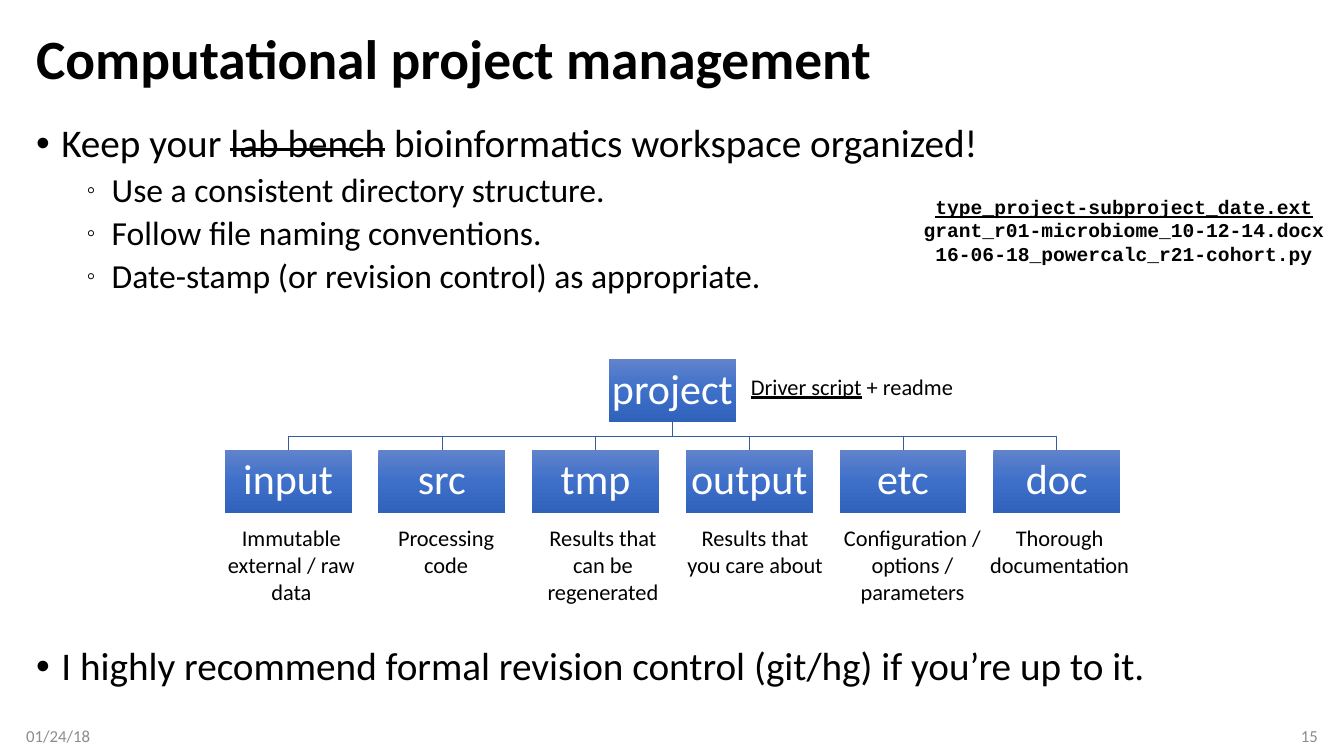
from dataclasses import dataclass

from lxml import etree
from pptx import Presentation
from pptx.dml.color import RGBColor
from pptx.enum.dml import MSO_LINE
from pptx.enum.shapes import MSO_SHAPE
from pptx.enum.text import MSO_ANCHOR, MSO_AUTO_SIZE, PP_ALIGN
from pptx.oxml.ns import qn
from pptx.shapes.base import BaseShape
from pptx.slide import Slide
from pptx.text.text import _Paragraph
from pptx.util import Inches, Pt

LEFT, CENTER, RIGHT = PP_ALIGN.LEFT, PP_ALIGN.CENTER, PP_ALIGN.RIGHT
TOP, MIDDLE = MSO_ANCHOR.TOP, MSO_ANCHOR.MIDDLE
FIT_SHAPE = MSO_AUTO_SIZE.SHAPE_TO_FIT_TEXT
RECTANGLE, SOLID = MSO_SHAPE.RECTANGLE, MSO_LINE.SOLID

COLORS = {"text": "000000", "footer": "8C8C8C", "box_text": "FFFFFF", "branch": "365B9D"}
BOX_GRADIENT = {0: "6183CB", 50: "3E70CA", 100: "3062BB"}

# Directory tree geometry, in inches
BOX_WIDTH, BOX_HEIGHT = 1.26, 0.63
COLUMN_STEP = BOX_WIDTH * 1.21
TREE_CENTER = 6.67
ROOT_TOP, FOLDER_TOP, CAPTION_TOP = 3.56, 4.46, 5.15


@dataclass(frozen=True)
class Style:
    size: float
    color: str = "text"
    font: str = "Calibri"
    bold: bool = False
    align: PP_ALIGN = LEFT
    line_spacing: float = 1.0


@dataclass(frozen=True)
class Piece:
    text: str
    underline: bool = False
    strike: bool = False


@dataclass(frozen=True)
class Bullet:
    symbol: str
    indent: float
    space_before: float
    percent: int
    style: Style


@dataclass(frozen=True)
class Area:
    left: float
    top: float
    width: float
    height: float


@dataclass(frozen=True)
class Folder:
    name: str
    caption: str
    caption_left: float
    caption_width: float


TITLE = Style(39.6, bold=True, line_spacing=0.9)
FOOTER = Style(12, "footer")
PAGE_NUMBER = Style(12, "footer", align=RIGHT)
BOX_LABEL = Style(30, "box_text", align=CENTER, line_spacing=0.9)
NOTE = Style(16)
CAPTION = Style(16, align=CENTER)
CODE = Style(14, font="Courier New", bold=True, align=CENTER)
MAIN_BULLET = Bullet("•", 0.25, 10, 100, Style(28, line_spacing=0.9))
SUB_BULLET = Bullet("◦", 0.75, 5, 75, Style(24, line_spacing=0.9))

FOLDERS = [
    Folder("input", "Immutable\nexternal / raw\ndata", 2.15, 1.48),
    Folder("src", "Processing\ncode", 3.84, 1.17),
    Folder("tmp", "Results that\ncan be\nregenerated", 5.32, 1.32),
    Folder("output", "Results that\nyou care about", 6.71, 1.56),
    Folder("etc", "Configuration /\noptions /\nparameters", 8.26, 1.58),
    Folder("doc", "Thorough\ndocumentation", 9.71, 1.6),
]


def write_paragraph(paragraph: _Paragraph, pieces: list[Piece], style: Style) -> None:
    paragraph.alignment = style.align
    paragraph.line_spacing = style.line_spacing
    if len(pieces) == 1:
        paragraph.text = pieces[0].text
    else:
        for piece in pieces:
            paragraph.add_run().text = piece.text
    for index, run in enumerate(paragraph.runs):
        piece = pieces[min(index, len(pieces) - 1)]
        run.font.size = Pt(style.size)
        run.font.name = style.font
        run.font.bold = style.bold
        run.font.underline = piece.underline
        run.font.color.rgb = RGBColor.from_string(COLORS[style.color])
        if piece.strike:
            run.font._element.set("strike", "sngStrike")


def set_bullet(paragraph: _Paragraph, bullet: Bullet) -> None:
    properties = paragraph._p.get_or_add_pPr()
    properties.set("marL", str(Inches(bullet.indent)))
    properties.set("indent", str(Inches(-0.25)))
    etree.SubElement(properties, qn("a:buSzPct"), val=str(bullet.percent * 1000))
    etree.SubElement(properties, qn("a:buFont"), typeface="Arial")
    etree.SubElement(properties, qn("a:buChar"), char=bullet.symbol)


def add_text(slide: Slide, area: Area, lines: list[list[Piece]], style: Style,
             anchor: MSO_ANCHOR = TOP, wrap: bool = True) -> BaseShape:
    shape = slide.shapes.add_textbox(
        Inches(area.left), Inches(area.top), Inches(area.width), Inches(area.height))
    frame = shape.text_frame
    frame.word_wrap = wrap
    frame.vertical_anchor = anchor
    if not wrap:
        frame.auto_size = FIT_SHAPE
    for index, pieces in enumerate(lines):
        paragraph = frame.add_paragraph() if index else frame.paragraphs[0]
        write_paragraph(paragraph, pieces, style)
    return shape


def add_bullets(slide: Slide, area: Area, items: list[tuple[Bullet, list[Piece]]]) -> None:
    frame = add_text(slide, area, [], MAIN_BULLET.style).text_frame
    for index, (bullet, pieces) in enumerate(items):
        paragraph = frame.add_paragraph() if index else frame.paragraphs[0]
        set_bullet(paragraph, bullet)
        if index:
            paragraph.space_before = Pt(bullet.space_before)
        write_paragraph(paragraph, pieces, bullet.style)


def add_box(slide: Slide, center: float, top: float, name: str) -> None:
    shape = slide.shapes.add_shape(
        RECTANGLE, Inches(center - BOX_WIDTH / 2), Inches(top),
        Inches(BOX_WIDTH), Inches(BOX_HEIGHT))
    shape.shadow.inherit = False
    shape.line.fill.background()
    shape.fill.gradient()
    shape.fill.gradient_angle = 270
    stops = shape._element.spPr.find(qn("a:gradFill")).find(qn("a:gsLst"))
    for stop in list(stops):
        stops.remove(stop)
    for position, color in BOX_GRADIENT.items():
        stop = etree.SubElement(stops, qn("a:gs"), pos=str(position * 1000))
        etree.SubElement(stop, qn("a:srgbClr"), val=color)
    frame = shape.text_frame
    frame.word_wrap = True
    frame.vertical_anchor = MIDDLE
    frame.margin_left = frame.margin_right = Inches(0.02)
    frame.margin_top = frame.margin_bottom = Inches(0.02)
    write_paragraph(frame.paragraphs[0], [Piece(name)], BOX_LABEL)


def add_branch(slide: Slide, center: float) -> None:
    start = ROOT_TOP + BOX_HEIGHT
    middle = (start + FOLDER_TOP) / 2
    builder = slide.shapes.build_freeform(Inches(TREE_CENTER), Inches(start))
    corners = [(TREE_CENTER, middle), (center, middle), (center, FOLDER_TOP)]
    builder.add_line_segments([(Inches(x), Inches(y)) for x, y in corners], close=False)
    shape = builder.convert_to_shape()
    shape.shadow.inherit = False
    shape.fill.background()
    shape.line.color.rgb = RGBColor.from_string(COLORS["branch"])
    shape.line.width = Pt(0.5)
    shape.line.dash_style = SOLID


def main() -> None:
    presentation = Presentation()
    presentation.slide_width, presentation.slide_height = Inches(13.33), Inches(7.5)
    slide = presentation.slides.add_slide(presentation.slide_layouts[6])

    # Title and bullets
    add_text(slide, Area(0.26, 0.25, 12.81, 0.72),
             [[Piece("Computational project management")]], TITLE, MIDDLE)
    add_bullets(slide, Area(0.26, 1.18, 12.81, 2), [
        (MAIN_BULLET, [Piece("Keep your "), Piece("lab bench", strike=True),
                       Piece(" bioinformatics workspace organized!")]),
        (SUB_BULLET, [Piece("Use a consistent directory structure.")]),
        (SUB_BULLET, [Piece("Follow file naming conventions.")]),
        (SUB_BULLET, [Piece("Date-stamp (or revision control) as appropriate.")]),
    ])
    add_bullets(slide, Area(0.26, 6.37, 12.81, 0.6), [
        (MAIN_BULLET, [Piece("I highly recommend formal revision control (git/hg) "
                             "if you’re up to it.")]),
    ])

    # Footer
    date = add_text(slide, Area(0.26, 7.1, 3, 0.4), [[Piece("01/24/18")]], FOOTER, MIDDLE)
    date.text_frame.margin_left = 0
    number = add_text(slide, Area(10.07, 7.1, 3, 0.4), [[Piece("15")]], PAGE_NUMBER, MIDDLE)
    number.text_frame.margin_right = 0

    # Directory tree
    middle_column = (len(FOLDERS) - 1) / 2
    for column, folder in enumerate(FOLDERS):
        center = TREE_CENTER + (column - middle_column) * COLUMN_STEP
        add_branch(slide, center)
        add_box(slide, center, FOLDER_TOP, folder.name)
        height = 0.37 + 0.27 * folder.caption.count("\n")
        add_text(slide, Area(folder.caption_left, CAPTION_TOP, folder.caption_width, height),
                 [[Piece(folder.caption)]], CAPTION, wrap=False)
    add_box(slide, TREE_CENTER, ROOT_TOP, "project")
    add_text(slide, Area(7.35, 3.65, 2.23, 0.37),
             [[Piece("Driver script", underline=True), Piece(" + readme")]], NOTE, wrap=False)

    # File naming examples
    add_text(slide, Area(9.05, 1.88, 4.2, 0.81), [
        [Piece("type_project-subproject_date.ext", underline=True)],
        [Piece("grant_r01-microbiome_10-12-14.docx")],
        [Piece("16-06-18_powercalc_r21-cohort.py")],
    ], CODE, wrap=False)

    presentation.save("out.pptx")


if __name__ == "__main__":
    main()
